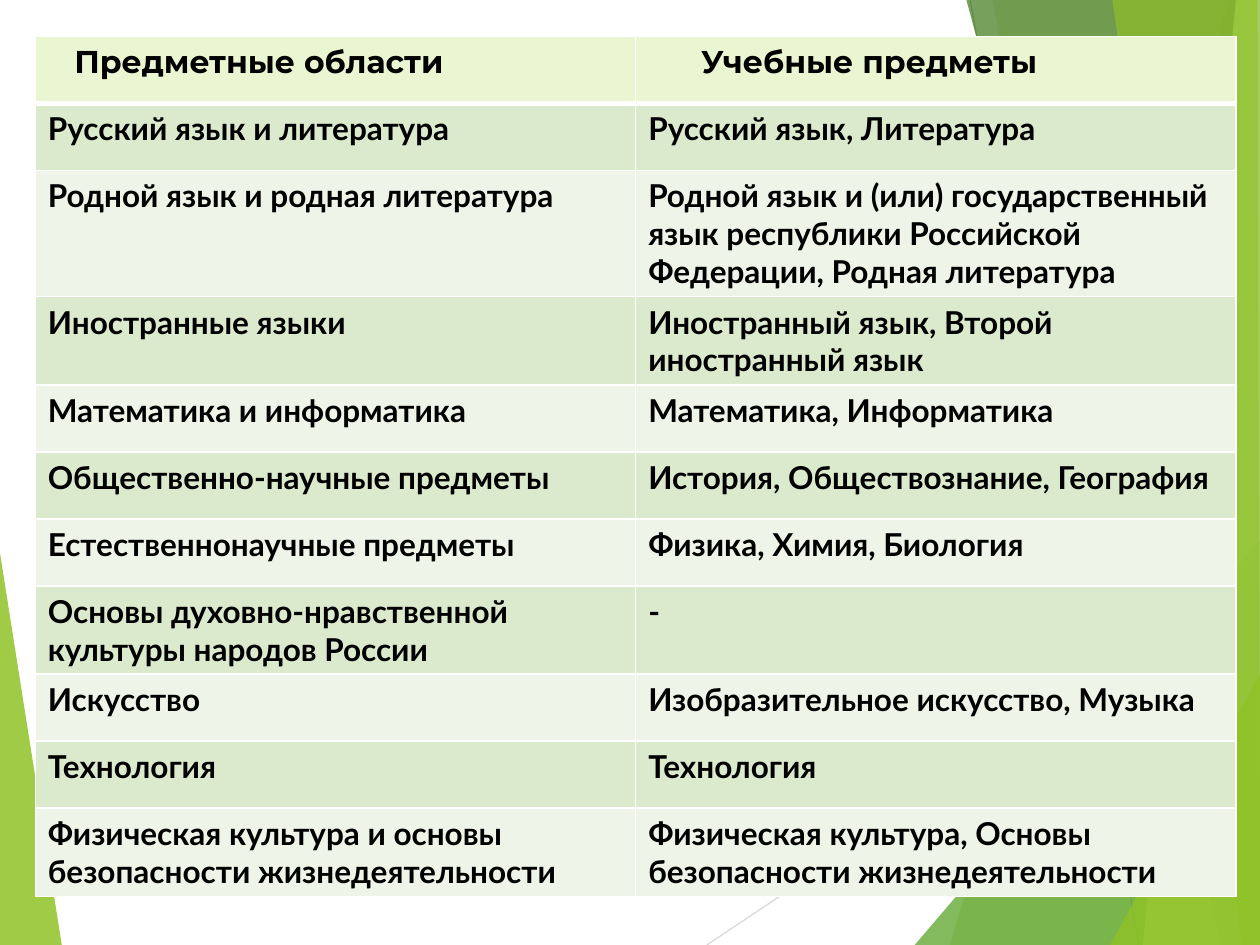
from lxml.etree import SubElement
from pptx import Presentation
from pptx.dml.color import RGBColor
from pptx.enum.shapes import MSO_CONNECTOR as Connector
from pptx.oxml.ns import qn
from pptx.util import Inches, Pt

COLS, ROWS = 100, 75  # slide grid, one unit is a tenth of an inch
GREEN, DEEP, DARK, PALE = "90C226", "54A021", "3F7819", "C0E474"
HEADER_FILL, BANDS = "EAF6D1", ("DBE9CD", "EEF4E8")

# colour, opacity in percent, corners in grid units
FACETS = [
    (GREEN, 30, [(97.5, 0), (75.4, 75), (100, 75), (100, 0)]),
    (GREEN, 20, [(78.8, 0), (91.9, 75), (100, 75), (100, 0)]),
    (DEEP, 72, [(72.6, 75), (100, 42.9), (100, 75)]),
    (DARK, 70, [(76.7, 0), (97, 75), (100, 75), (100, 0)]),
    (PALE, 70, [(98.1, 0), (90.7, 75), (100, 75), (100, 0)]),
    (GREEN, 65, [(88.3, 0), (98.6, 75), (100, 75), (99.8, 0)]),
    (GREEN, 80, [(88.1, 75), (100, 53.5), (100, 75)]),
]
HEADINGS = ["Предметные области", "Учебные предметы"]
HEADING_INDENTS = [3.1, 5.2]
SUBJECTS = [
    ("Русский язык и литература", "Русский язык, Литература"),
    ("Родной язык и родная литература",
     "Родной язык и (или) государственный язык республики Российской "
     "Федерации, Родная литература"),
    ("Иностранные языки", "Иностранный язык, Второй иностранный язык"),
    ("Математика и информатика", "Математика, Информатика"),
    ("Общественно-научные предметы", "История, Обществознание, География"),
    ("Естественнонаучные предметы", "Физика, Химия, Биология"),
    ("Основы духовно-нравственной культуры народов России", "-"),
    ("Искусство", "Изобразительное искусство, Музыка"),
    ("Технология", "Технология"),
    ("Физическая культура и основы безопасности жизнедеятельности",
     "Физическая культура, Основы безопасности жизнедеятельности"),
]
ONE_LINE, TWO_LINES, THREE_LINES = 5.32, 6.95, 9.95
TALL_ROWS = {2: THREE_LINES, 3: TWO_LINES, 7: TWO_LINES, 10: TWO_LINES}


def rgb(value):
    return RGBColor.from_string(value)


class SlideBuilder:
    heading_font, body_font, text_size = "Montserrat", "Lato", 18

    def __init__(self, deck):
        self.slide = deck.slides.add_slide(deck.slide_layouts[6])
        self.unit_x = deck.slide_width / COLS
        self.unit_y = deck.slide_height / ROWS

    def x(self, columns):
        return round(columns * self.unit_x)

    def y(self, rows):
        return round(rows * self.unit_y)

    def facet(self, color, opacity, corners):
        points = [(self.x(col), self.y(row)) for col, row in corners]
        outline = self.slide.shapes.build_freeform(*points[0])
        outline.add_line_segments(points[1:], close=True)
        shape = outline.convert_to_shape()
        shape.shadow.inherit = False
        shape.line.fill.background()
        shape.fill.solid()
        shape.fill.fore_color.rgb = rgb(color)
        tint = shape.fill._xPr.find(qn("a:solidFill"))[0]
        SubElement(tint, qn("a:alpha"), val=str(opacity * 1000))

    def line(self, start, end, color):
        rule = self.slide.shapes.add_connector(
            Connector.STRAIGHT, self.x(start[0]), self.y(start[1]),
            self.x(end[0]), self.y(end[1]))
        rule.line.color.rgb = rgb(color)
        rule.line.width = Pt(0.75)
        SubElement(rule._element.spPr, qn("a:effectLst"))

    def cell(self, cell, text, font, fill, top=1, bottom=1):
        cell.text = text
        style = cell.text_frame.paragraphs[0].font
        style.name, style.size, style.bold = font, Pt(self.text_size), True
        style.color.rgb = rgb("000000")
        cell.fill.solid()
        cell.fill.fore_color.rgb = rgb(fill)
        self.borders(cell, {"lnL": 1, "lnR": 1, "lnT": top, "lnB": bottom})

    def borders(self, cell, widths):
        """Draw white borders; their XML has to stand before the fill."""
        properties = cell._tc.get_or_add_tcPr()
        for position, (side, width) in enumerate(widths.items()):
            border = SubElement(properties, qn(f"a:{side}"), w=str(Pt(width)))
            paint = SubElement(border, qn("a:solidFill"))
            SubElement(paint, qn("a:srgbClr"), val="FFFFFF")
            properties.insert(position, border)

    def table(self, left, top, width, headings, indents, records, heights):
        table = self.slide.shapes.add_table(
            len(heights), len(headings), self.x(left), self.y(top),
            self.x(width), self.y(sum(heights))).table
        table.horz_banding = False
        for row, height in zip(table.rows, heights):
            row.height = self.y(height)
        for col, (heading, indent) in enumerate(zip(headings, indents)):
            header = table.cell(0, col)
            self.cell(header, heading, self.heading_font, HEADER_FILL, bottom=3)
            header.margin_left = self.x(indent)
        for number, record in enumerate(records, 1):
            for col, text in enumerate(record):
                self.cell(table.cell(number, col), text, self.body_font,
                          BANDS[(number - 1) % 2], top=3 if number == 1 else 1)


def main():
    deck = Presentation()
    deck.slide_width, deck.slide_height = Inches(10), Inches(7.5)
    builder = SlideBuilder(deck)
    builder.facet(GREEN, 85, [(0, 43.9), (4.9, 75), (0, 75)])
    builder.line((56.1, 75), (100, 45.7), "D9D9D9")
    builder.line((77, 0), (90.4, 75), "BFBFBF")
    for facet in FACETS:
        builder.facet(*facet)
    heights = [TALL_ROWS.get(row, ONE_LINE) for row in range(len(SUBJECTS) + 1)]
    builder.table(2.8, 2.9, 95.3, HEADINGS, HEADING_INDENTS, SUBJECTS, heights)
    deck.save("out.pptx")


if __name__ == "__main__":
    main()
